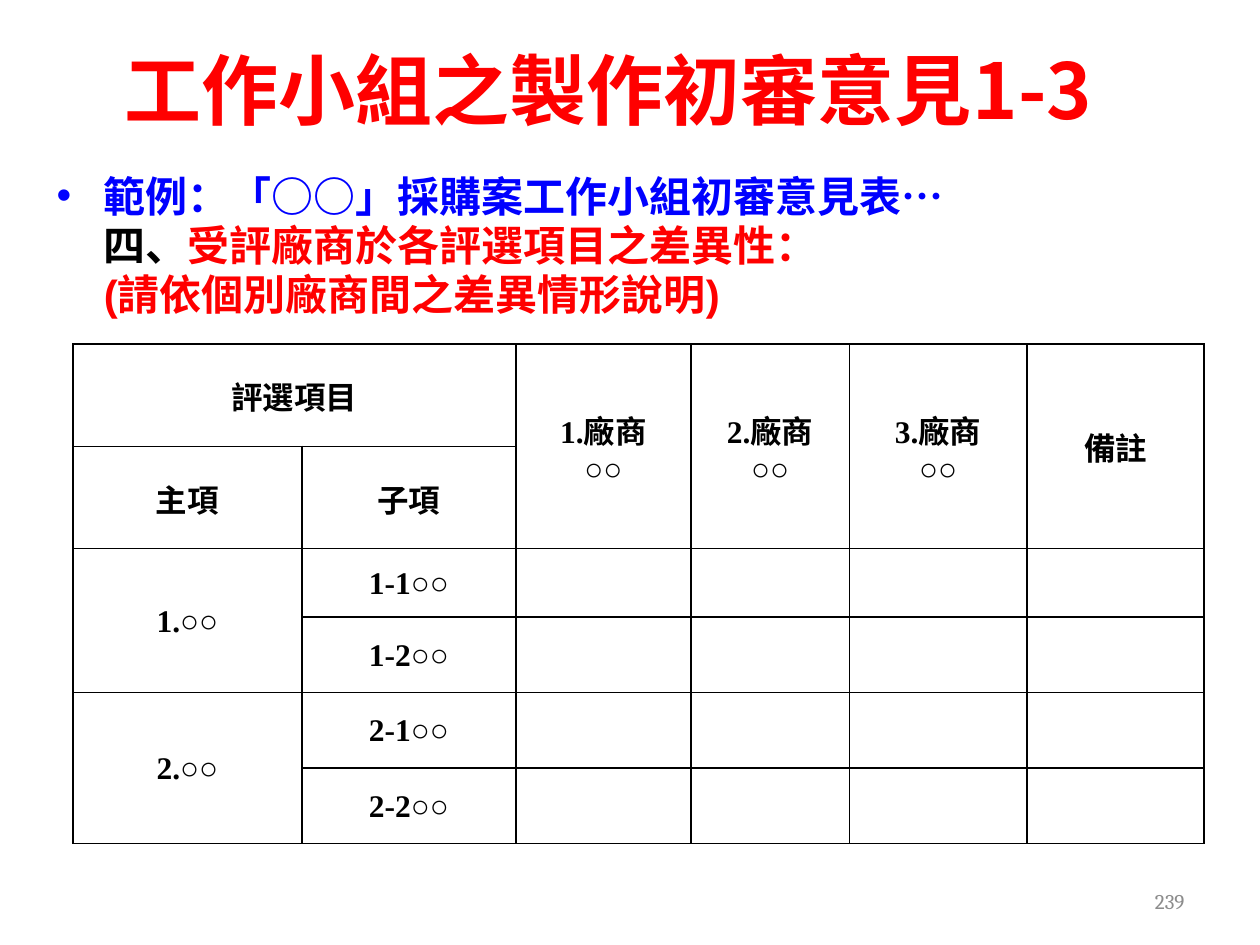
from collections import namedtuple
from dataclasses import dataclass

from lxml import etree
from pptx import Presentation
from pptx.dml.color import RGBColor
from pptx.enum.text import MSO_ANCHOR, MSO_AUTO_SIZE, PP_ALIGN
from pptx.oxml.ns import qn
from pptx.util import Cm, Pt

CENTER, RIGHT = PP_ALIGN.CENTER, PP_ALIGN.RIGHT
MIDDLE, TOP = MSO_ANCHOR.MIDDLE, MSO_ANCHOR.TOP
NO_FIT = MSO_AUTO_SIZE.NONE

Box = namedtuple("Box", "left top width height")


@dataclass(frozen=True)
class Theme:
    red: str = "FF0000"
    blue: str = "0000FF"
    black: str = "000000"
    gray: str = "8C8C8C"
    title_size: int = 44
    body_size: int = 24
    table_size: int = 18
    number_size: int = 12
    title_font: str = "Noto Sans CJK SC"
    body_font: str = "Arial"
    table_font: str = "Times New Roman"
    number_font: str = "Cambria"


THEME = Theme()
COLUMNS = [4.62, 4.32, 3.53, 3.2, 3.58, 3.58]
ROWS = [2.06, 2.06, 1.37, 1.52, 1.52, 1.52]
MERGES = [(0, 0, 0, 1), (2, 0, 3, 0), (4, 0, 5, 0)]
MERGES += [(0, col, 1, col) for col in range(2, 6)]
VENDORS = [f"{n}.廠商\n○○" for n in (1, 2, 3)]
CELLS = [
    ["評選項目", "", *VENDORS, "備註"],
    ["主項", "子項"],
    ["1.○○", "1-1○○"],
    ["", "1-2○○"],
    ["2.○○", "2-1○○"],
    ["", "2-2○○"],
]


def add_text(p, text, size, font, color, bold=True, align=None):
    if align is not None:
        p.alignment = align
    for i, line in enumerate(text.split("\n")):
        if i:
            p.add_line_break()
        if not line:
            continue
        r = p.add_run()
        r.text = line
        r.font.size = Pt(size)
        r.font.name = font
        r.font.bold = bold
        r.font.color.rgb = RGBColor.from_string(color)


def place(sp, box, anchor):
    sp.left, sp.top, sp.width, sp.height = (Cm(v) for v in box)
    tf = sp.text_frame
    tf.word_wrap = True
    tf.auto_size = NO_FIT
    tf.vertical_anchor = anchor
    return tf.paragraphs[0]


def build_title(slide, box):
    p = place(slide.shapes.title, box, MIDDLE)
    add_text(p, "工作小組之製作初審意見1-3", THEME.title_size,
             THEME.title_font, THEME.red, align=CENTER)


def build_body(slide, box):
    p = place(slide.placeholders[1], box, TOP)
    p.line_spacing = Pt(28)
    pPr = p._p.get_or_add_pPr()
    pPr.set("marL", str(Cm(0.95)))
    pPr.set("indent", str(Cm(-0.95)))
    for text, color in [
        ("範例：「○○」採購案工作小組初審意見表…\n", THEME.blue),
        ("四、", THEME.black),
        ("受評廠商於各評選項目之差異性：\n(請依個別廠商間之差異情形說明)", THEME.red),
    ]:
        add_text(p, text, THEME.body_size, THEME.body_font, color)


def set_borders(cell):
    tcPr = cell._tc.get_or_add_tcPr()
    for side in ("a:lnL", "a:lnR", "a:lnT", "a:lnB"):
        ln = etree.SubElement(tcPr, qn(side), w=str(Pt(1)))
        fill = etree.SubElement(ln, qn("a:solidFill"))
        etree.SubElement(fill, qn("a:srgbClr"), val=THEME.black)


def build_table(slide, box):
    frame = slide.shapes.add_table(len(ROWS), len(COLUMNS), *(Cm(v) for v in box))
    table = frame.table
    table.first_row = table.horz_banding = False
    for col, width in zip(table.columns, COLUMNS):
        col.width = Cm(box.width * width / sum(COLUMNS))
    for row, height in zip(table.rows, ROWS):
        row.height = Cm(box.height * height / sum(ROWS))
    for cell in table.iter_cells():
        set_borders(cell)
        cell.fill.background()
        cell.vertical_anchor = MIDDLE
        cell.margin_left = cell.margin_right = Cm(0.18)
        cell.margin_top, cell.margin_bottom = Cm(0.03), 0
    for top, left, bottom, right in MERGES:
        table.cell(top, left).merge(table.cell(bottom, right))
    for i, texts in enumerate(CELLS):
        for j, text in enumerate(texts):
            tf = table.cell(i, j).text_frame
            for k, line in enumerate(text.split("\n")):
                p = tf.add_paragraph() if k else tf.paragraphs[0]
                add_text(p, line, THEME.table_size, THEME.table_font,
                         THEME.black, align=CENTER)


def build_number(slide, box):
    sp = slide.shapes.add_textbox(*(Cm(v) for v in box))
    p = place(sp, box, MIDDLE)
    add_text(p, "239", THEME.number_size, THEME.number_font, THEME.gray,
             bold=False, align=RIGHT)


def main():
    prs = Presentation()
    prs.slide_width, prs.slide_height = Cm(25.4), Cm(19.05)
    slide = prs.slides.add_slide(prs.slide_layouts[1])
    build_title(slide, Box(1.47, 0.64, 21.59, 2.29))
    build_body(slide, Box(0.89, 3.33, 24, 3.61))
    build_table(slide, Box(1.47, 6.93, 22.81, 10.08))
    build_number(slide, Box(18.21, 17.65, 5.92, 1.02))
    prs.save("out.pptx")


if __name__ == "__main__":
    main()
